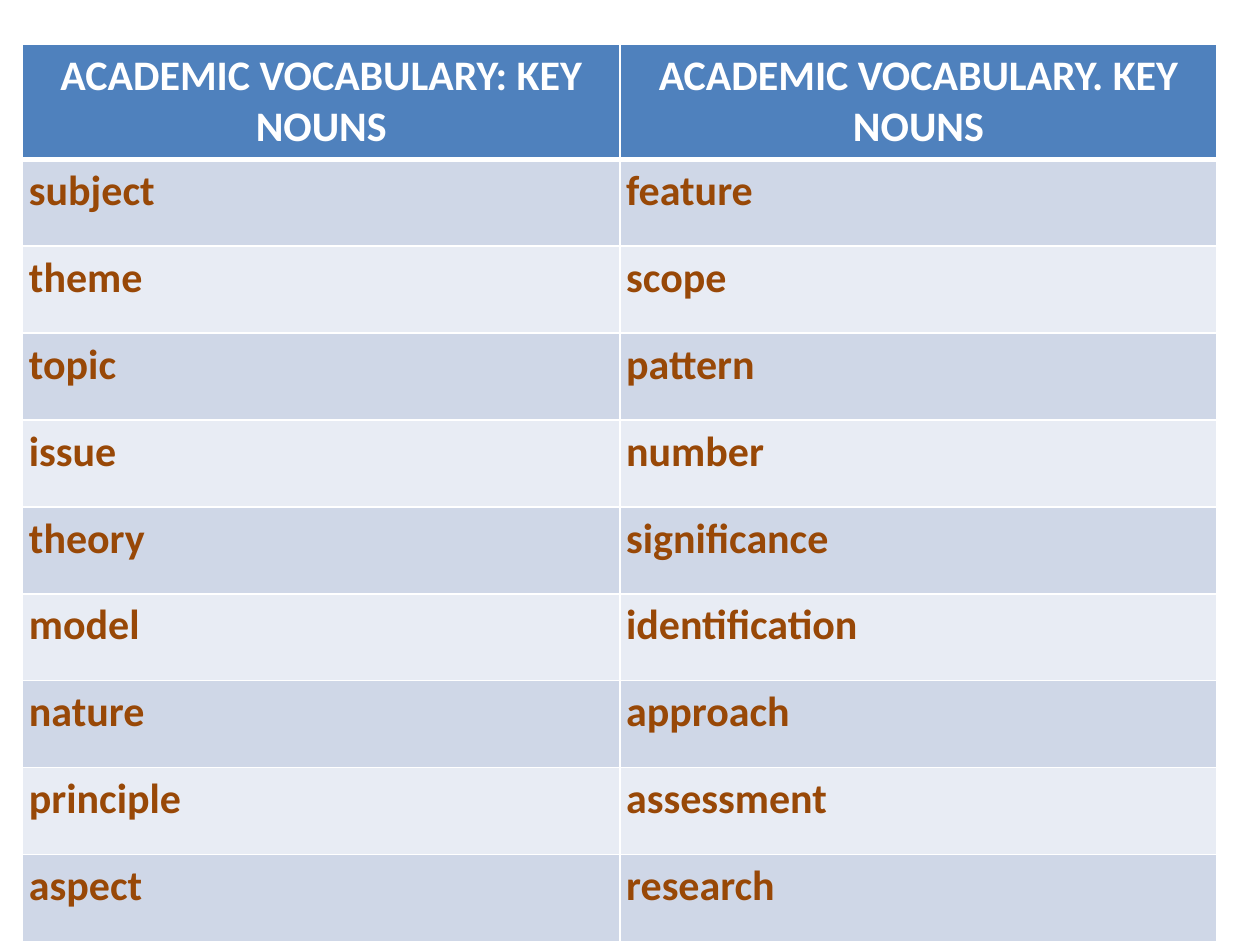
"""Build a slide with a two-column table of academic key nouns."""
from lxml import etree
from pptx import Presentation
from pptx.dml.color import RGBColor
from pptx.enum.text import PP_ALIGN
from pptx.oxml.ns import qn
from pptx.util import Inches, Pt

CENTER, LEFT = PP_ALIGN.CENTER, PP_ALIGN.LEFT
WHITE = RGBColor(0xFF, 0xFF, 0xFF)
BLUE = RGBColor(0x4F, 0x81, 0xBD)
BROWN = RGBColor(0x98, 0x48, 0x07)
BANDS = (RGBColor(0xE8, 0xEC, 0xF4), RGBColor(0xCF, 0xD7, 0xE7))

ROW_HEIGHT, COLUMN_WIDTH = Inches(0.69), Inches(4.74)
INSET = Inches(0.05)
THIN, THICK = Pt(1), Pt(3)

NOUNS = (
    ("ACADEMIC VOCABULARY: KEY NOUNS", "ACADEMIC VOCABULARY. KEY NOUNS"),
    ("subject", "feature"),
    ("theme", "scope"),
    ("topic", "pattern"),
    ("issue", "number"),
    ("theory", "significance"),
    ("model", "identification"),
    ("nature", "approach"),
    ("principle", "assessment"),
    ("aspect", "research"),
)


def write_text(tf, text, color=BROWN, align=LEFT, size=24, bold=True, font="Calibri"):
    """Write one formatted run into a text frame."""
    p = tf.paragraphs[0]
    p.alignment = align
    r = p.add_run()
    r.text = text
    r.font.name, r.font.size, r.font.bold = font, Pt(size), bold
    r.font.color.rgb = color


def set_borders(cell, top=THIN, bottom=THIN, color=WHITE):
    """Draw solid lines on the four sides of a cell."""
    tc_pr = cell._tc.get_or_add_tcPr()
    for side, width in (("L", THIN), ("R", THIN), ("T", top), ("B", bottom)):
        ln = etree.SubElement(tc_pr, qn(f"a:ln{side}"), w=str(width))
        fill = etree.SubElement(ln, qn("a:solidFill"))
        etree.SubElement(fill, qn("a:srgbClr"), val=str(color))


def format_cell(cell, fill, **borders):
    """Set the borders, fill and margins of a cell."""
    set_borders(cell, **borders)
    cell.fill.solid()
    cell.fill.fore_color.rgb = fill
    cell.margin_left = cell.margin_right = INSET
    cell.margin_top = cell.margin_bottom = INSET


def add_noun_table(s, rows, left, top):
    """Add the table with a header row and banded body rows."""
    n_rows, n_cols = len(rows), len(rows[0])
    table = s.shapes.add_table(n_rows, n_cols, left, top,
                               n_cols * COLUMN_WIDTH, n_rows * ROW_HEIGHT).table
    for i, row in enumerate(rows):
        for j, text in enumerate(row):
            cell = table.cell(i, j)
            if i == 0:
                format_cell(cell, BLUE, bottom=THICK)
                write_text(cell.text_frame, text, color=WHITE, align=CENTER)
            else:
                format_cell(cell, BANDS[i % 2], top=THICK if i == 1 else THIN)
                write_text(cell.text_frame, text)


def main():
    """Create the presentation and save it."""
    prs = Presentation()
    prs.slide_width, prs.slide_height = Inches(10), Inches(7.5)
    s = prs.slides.add_slide(prs.slide_layouts[6])
    add_noun_table(s, NOUNS, Inches(0.18), Inches(0.35))
    prs.save("out.pptx")


if __name__ == "__main__":
    main()
